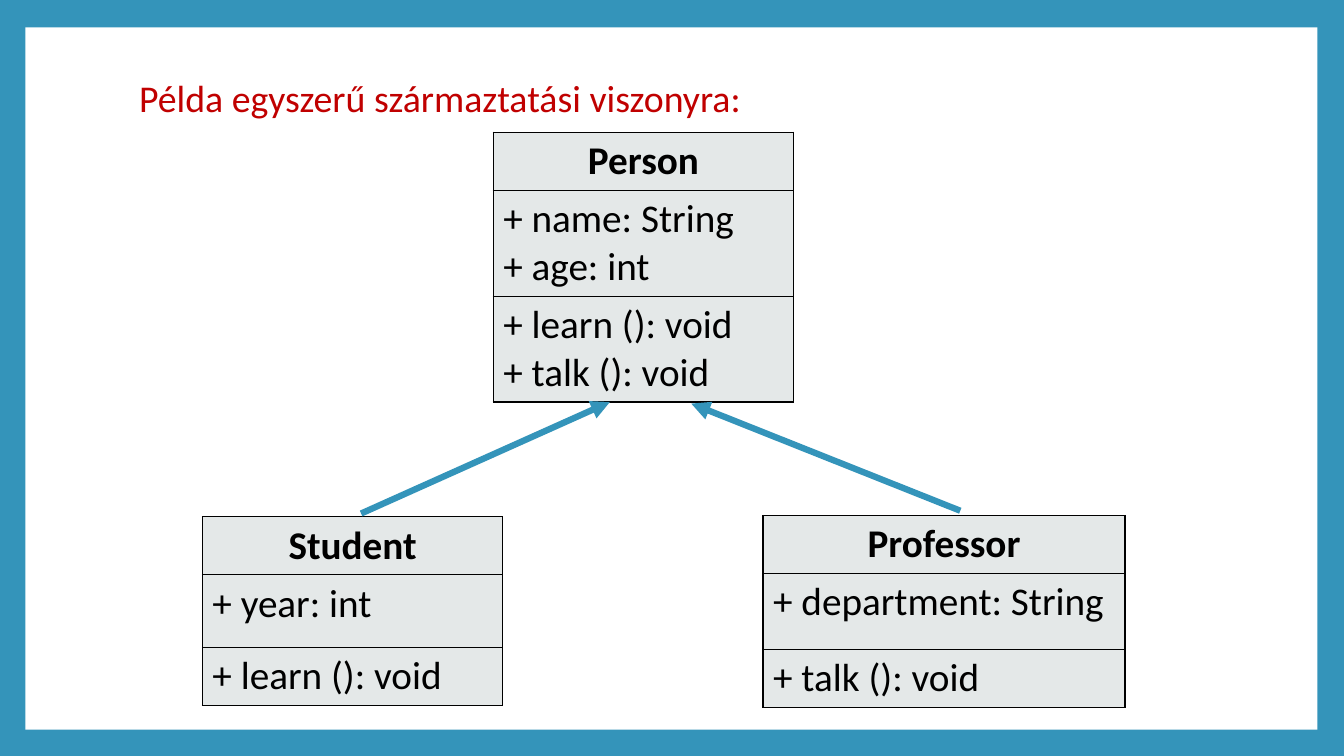
from dataclasses import dataclass

from lxml import etree
from pptx import Presentation
from pptx.dml.color import RGBColor
from pptx.enum.shapes import MSO_CONNECTOR, MSO_SHAPE
from pptx.enum.text import MSO_ANCHOR, PP_ALIGN
from pptx.oxml.ns import qn
from pptx.slide import Slide
from pptx.text.text import TextFrame
from pptx.util import Cm, Pt

RECT = MSO_SHAPE.RECTANGLE
LINE = MSO_CONNECTOR.STRAIGHT
TOP = MSO_ANCHOR.TOP
LEFT = PP_ALIGN.LEFT
CENTER = PP_ALIGN.CENTER

BLUE = RGBColor(0x34, 0x94, 0xBA)
WHITE = RGBColor(0xFF, 0xFF, 0xFF)
BLACK = RGBColor(0, 0, 0)
RED = RGBColor(0xC0, 0, 0)
GREY = RGBColor(0xE4, 0xE8, 0xE8)
FONT = "Calibri"
ROW = 1.46


@dataclass(frozen=True)
class Entity:
    name: str
    fields: str
    methods: str
    left: float
    top: float
    width: float
    middle: float
    bottom: float = ROW


@dataclass(frozen=True)
class Arrow:
    start: tuple[float, float]
    end: tuple[float, float]


ENTITIES = (
    Entity("Person", "+ name: String\n+ age: int",
           "+ learn (): void\n+ talk (): void", 12.43, 3.33, 7.57, 2.67, 2.67),
    Entity("Student", "+ year: int", "+ learn (): void",
           5.1, 13.02, 7.57, 1.83),
    Entity("Professor", "+ department: String", "+ talk (): void",
           19.23, 12.99, 9.12, 1.91),
)
ARROWS = (
    Arrow((9.1, 12.94), (15.37, 10.13)),
    Arrow((24.2, 12.87), (17.42, 10.17)),
)


def write(frame: TextFrame, text: str, *, size: float = 28,
          color: RGBColor = BLACK, bold: bool = False,
          align: PP_ALIGN = LEFT, space: float = 1.0) -> None:
    frame.text = text
    for para in frame.paragraphs:
        para.alignment = align
        para.line_spacing = space
        for run in para.runs:
            font = run.font
            font.name = FONT
            font.size = Pt(size)
            font.bold = bold
            font.color.rgb = color


def outline(cell) -> None:
    props = cell._tc.get_or_add_tcPr()
    for spot, side in enumerate(("lnL", "lnR", "lnT", "lnB")):
        edge = etree.Element(qn(f"a:{side}"), w=str(Pt(1)))
        fill = etree.SubElement(edge, qn("a:solidFill"))
        etree.SubElement(fill, qn("a:srgbClr"), val=str(BLACK))
        props.insert(spot, edge)


def draw_entity(slide: Slide, item: Entity) -> None:
    rows = (ROW, item.middle, item.bottom)
    table = slide.shapes.add_table(
        len(rows), 1, Cm(item.left), Cm(item.top),
        Cm(item.width), Cm(sum(rows))).table
    table.first_row = False
    table.horz_banding = False
    texts = (item.name, item.fields, item.methods)
    for index, (text, height) in enumerate(zip(texts, rows)):
        table.rows[index].height = Cm(height)
        cell = table.cell(index, 0)
        cell.fill.solid()
        cell.fill.fore_color.rgb = GREY
        outline(cell)
        head = index == 0
        write(cell.text_frame, text, bold=head,
              align=CENTER if head else LEFT)


def draw_arrow(slide: Slide, item: Arrow) -> None:
    ends = [Cm(value) for value in (*item.start, *item.end)]
    link = slide.shapes.add_connector(LINE, *ends)
    link.line.color.rgb = BLUE
    link.line.width = Pt(4.5)
    etree.SubElement(link.line._get_or_add_ln(), qn("a:tailEnd"),
                     type="triangle")
    etree.SubElement(link.element.spPr, qn("a:effectLst"))


def draw_title(slide: Slide) -> None:
    title = slide.shapes.title
    title.left, title.top = Cm(3.25), Cm(1.88)
    title.width, title.height = Cm(27.43), Cm(1.88)
    title.text_frame.vertical_anchor = TOP
    write(title.text_frame, "Példa egyszerű származtatási viszonyra:",
          size=27, color=RED, space=0.9)


def draw_frame(slide: Slide) -> None:
    back = slide.background.fill
    back.solid()
    back.fore_color.rgb = BLUE
    panel = slide.shapes.add_shape(RECT, Cm(0.64), Cm(0.69),
                                   Cm(32.56), Cm(17.7))
    panel.shadow.inherit = False
    panel.fill.solid()
    panel.fill.fore_color.rgb = WHITE
    panel.line.fill.background()
    slide.shapes.title.element.addprevious(panel.element)


def main() -> None:
    deck = Presentation()
    deck.slide_width, deck.slide_height = Cm(33.87), Cm(19.05)
    slide = deck.slides.add_slide(deck.slide_layouts[5])
    draw_frame(slide)
    draw_title(slide)
    for item in ENTITIES:
        draw_entity(slide, item)
    for item in ARROWS:
        draw_arrow(slide, item)
    deck.save("out.pptx")


if __name__ == "__main__":
    main()
